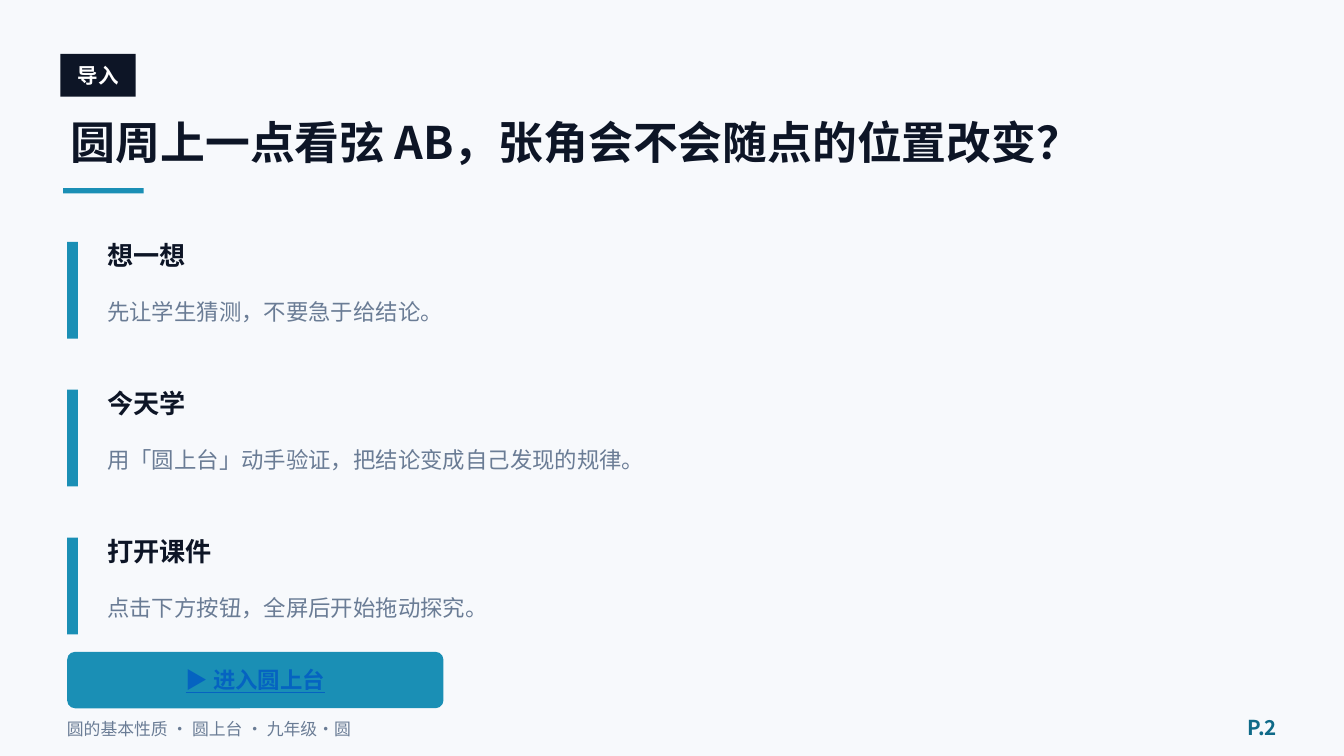
"""Build the lesson's opening slide: a question, three prompts and a start button."""
from dataclasses import dataclass

from lxml import etree
from pptx import Presentation
from pptx.dml.color import RGBColor
from pptx.enum import shapes, text
from pptx.oxml import ns
from pptx.util import Inches, Pt

TAG = "导入"
TITLE = "圆周上一点看弦 AB，张角会不会随点的位置改变？"
PROMPTS = [
    ("想一想", "先让学生猜测，不要急于给结论。"),
    ("今天学", "用「圆上台」动手验证，把结论变成自己发现的规律。"),
    ("打开课件", "点击下方按钮，全屏后开始拖动探究。"),
]
BUTTON = "▶ 进入圆上台"
FOOTER = "圆的基本性质 · 圆上台 · 九年级·圆"
PAGE_NUMBER = "P.2"


@dataclass(frozen=True)
class Theme:
    font: str = "Noto Sans CJK SC"
    paper: str = "F7F9FC"
    ink: str = "0D1526"
    accent: str = "1A8FB5"
    muted: str = "6A7C95"
    white: str = "FFFFFF"
    link: str = "0563C1"
    number: str = "0F6A88"
    title: int = 24
    heading: int = 14
    body: int = 12
    label: int = 11
    small: int = 9


THEME = Theme()
LEFT, CENTER, RIGHT = text.PP_ALIGN.LEFT, text.PP_ALIGN.CENTER, text.PP_ALIGN.RIGHT
FIRST_TOP, PROMPT_STEP = 1.8, 1.1


def write(shape, words, size, color, bold=False, align=LEFT, underline=None):
    frame = shape.text_frame
    frame.word_wrap = True
    frame.vertical_anchor = text.MSO_ANCHOR.MIDDLE
    para = frame.paragraphs[0]
    para.alignment = align
    span = para.add_run()
    span.text = words
    font = span.font
    font.name, font.size, font.bold = THEME.font, Pt(size), bold
    font.underline = underline
    font.color.rgb = RGBColor.from_string(color)
    east_asian = etree.SubElement(span._r.get_or_add_rPr(), ns.qn("a:ea"))
    east_asian.set("typeface", THEME.font)


def add_text(page, at, *args, **style):
    box = page.shapes.add_textbox(*map(Inches, at))
    write(box, *args, **style)


def add_block(page, at, color, kind=shapes.MSO_SHAPE.RECTANGLE):
    block = page.shapes.add_shape(kind, *map(Inches, at))
    block.shadow.inherit = False
    block.fill.solid()
    block.fill.fore_color.rgb = RGBColor.from_string(color)
    block.line.fill.background()
    return block


def add_header(page):
    add_block(page, (0.45, 0.4, 0.56, 0.32), THEME.ink)
    add_text(page, (0.45, 0.39, 0.56, 0.34), TAG, THEME.label, THEME.white,
             bold=True, align=CENTER)
    add_text(page, (0.43, 0.78, 9, 0.55), TITLE, THEME.title, THEME.ink, bold=True)
    add_block(page, (0.47, 1.4, 0.6, 0.04), THEME.accent)


def add_prompts(page):
    for index, (heading, body) in enumerate(PROMPTS):
        top = FIRST_TOP + index * PROMPT_STEP
        add_block(page, (0.5, top, 0.08, 0.72), THEME.accent)
        add_text(page, (0.7, top - 0.05, 8.8, 0.3), heading, THEME.heading,
                 THEME.ink, bold=True)
        add_text(page, (0.7, top + 0.27, 8.8, 0.5), body, THEME.body, THEME.muted)


def add_button(page):
    button = add_block(page, (0.5, 4.85, 2.8, 0.42), THEME.accent,
                       shapes.MSO_SHAPE.ROUNDED_RECTANGLE)
    button.adjustments[0] = 0.14
    write(button, BUTTON, THEME.body, THEME.link, bold=True, align=CENTER,
          underline=True)


def add_footer(page):
    add_text(page, (0.4, 5.28, 7.2, 0.28), FOOTER, THEME.small, THEME.muted)
    add_text(page, (9, 5.26, 0.6, 0.3), PAGE_NUMBER, THEME.label, THEME.number,
             bold=True, align=RIGHT)


def main():
    deck = Presentation()
    deck.slide_width = Inches(10)
    deck.slide_height = deck.slide_width * 9 // 16
    page = deck.slides.add_slide(deck.slide_layouts[6])
    page.background.fill.solid()
    page.background.fill.fore_color.rgb = RGBColor.from_string(THEME.paper)
    add_header(page)
    add_prompts(page)
    add_button(page)
    add_footer(page)
    deck.save("out.pptx")


if __name__ == "__main__":
    main()
